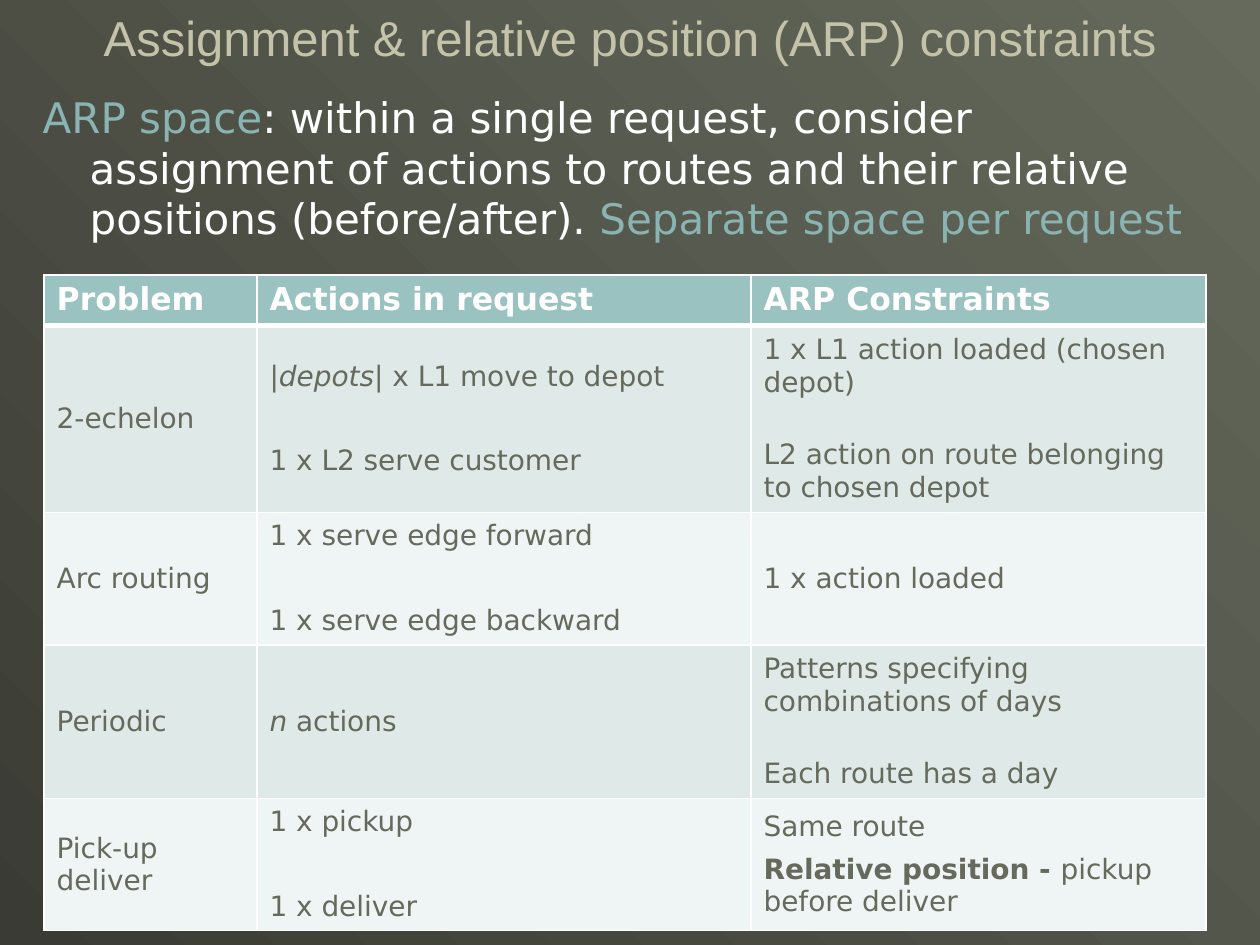
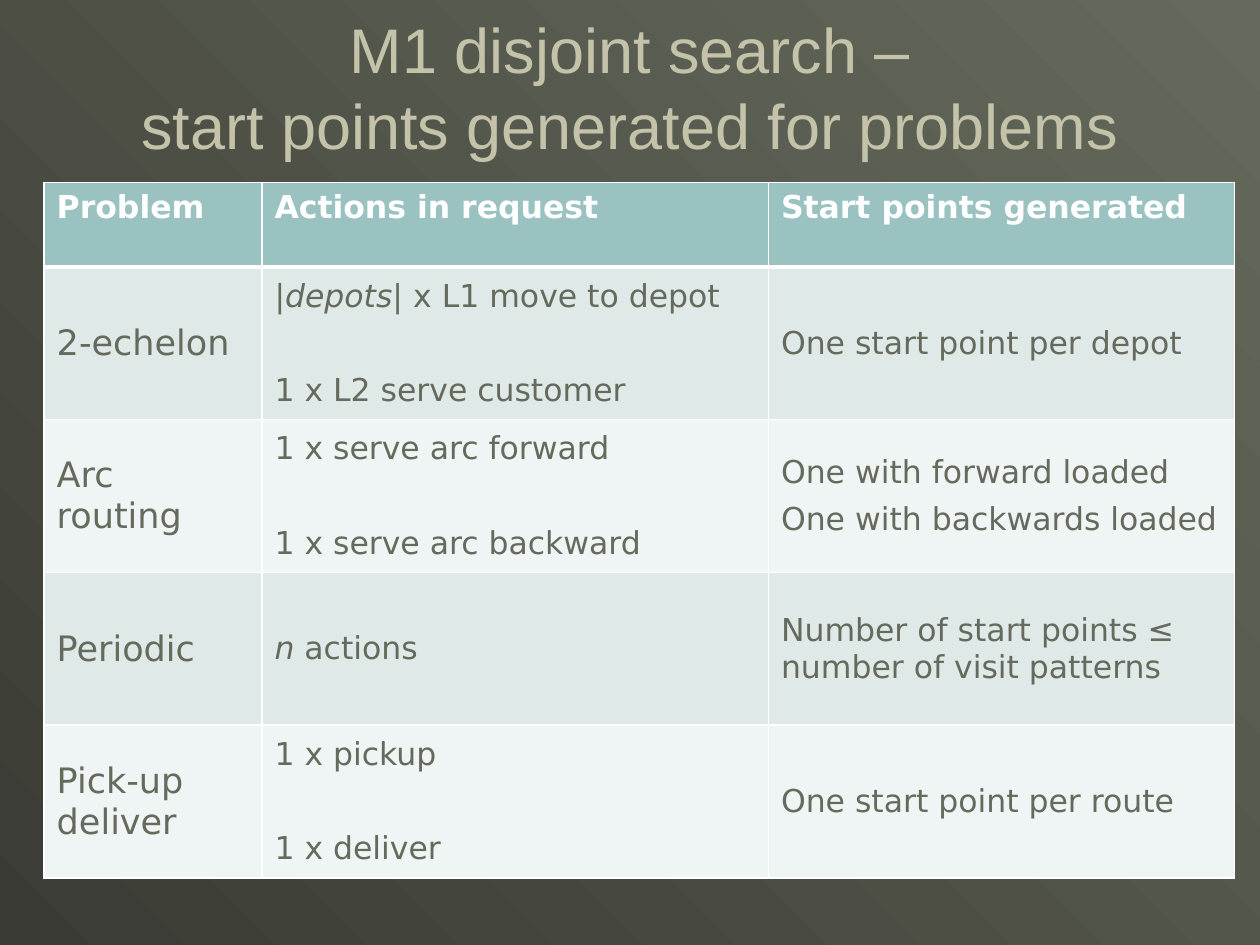
from lxml import etree
from pptx import Presentation
from pptx.dml.color import RGBColor
from pptx.enum.text import MSO_ANCHOR, PP_ALIGN
from pptx.oxml.ns import qn
from pptx.util import Cm, Pt

TOP, MIDDLE = MSO_ANCHOR.TOP, MSO_ANCHOR.MIDDLE
LEFT, CENTER = PP_ALIGN.LEFT, PP_ALIGN.CENTER
BLANK_LAYOUT = 6

COLORS = {
    "dark": "3A3B34",
    "olive": "666A5C",
    "title": "C4C3AA",
    "accent": "8AB4B1",
    "header": "9AC2C0",
    "odd_row": "DEE9E8",
    "even_row": "EFF4F4",
    "white": "FFFFFF",
}
TITLE_FONT = "Arial"
BODY_FONT = "DejaVu Sans"
MARGIN = 0.89
LINE_GAP = 6


def rgb(name):
    return RGBColor.from_string(COLORS[name])


def write(frame, paras, size=18, font=BODY_FONT, color="white", bold=False,
          align=LEFT, before=0, gap=None):
    """Fill a text frame; a para is a list of strings or (text, format) spans.

    gap is the space before every para after the first; "\\n" breaks a line.
    """
    frame.word_wrap = True
    for index, spans in enumerate(paras):
        para = frame.paragraphs[0] if index == 0 else frame.add_paragraph()
        para.alignment = align
        para.space_before = Pt(gap if index and gap else before)
        for span in spans:
            text, style = (span, {}) if isinstance(span, str) else span
            for number, line in enumerate(text.split("\n")):
                if number:
                    para.add_line_break()
                run = para.add_run()
                run.text = line
                run.font.name = font
                run.font.size = Pt(size)
                run.font.bold = style.get("bold", bold)
                run.font.italic = style.get("italic", False)
                run.font.color.rgb = rgb(style.get("color", color))


def set_borders(cell, **widths):
    """Draw white cell borders, with widths in points keyed L, R, T and B."""
    properties = cell._tc.get_or_add_tcPr()
    for side in "LRTB":
        line = etree.SubElement(properties, qn(f"a:ln{side}"),
                                w=str(Pt(widths.get(side, 1))))
        fill = etree.SubElement(line, qn("a:solidFill"))
        etree.SubElement(fill, qn("a:srgbClr"), val=COLORS["white"])


class DeckBuilder:
    def __init__(self):
        self.deck = Presentation()
        self.deck.slide_width, self.deck.slide_height = Cm(25.4), Cm(19.05)
        self.page = None

    def add_page(self, title, top, size):
        self.page = self.deck.slides.add_slide(self.deck.slide_layouts[BLANK_LAYOUT])
        fill = self.page.background.fill
        fill.gradient()
        fill.gradient_angle = 45
        for stop, position, name in zip(fill.gradient_stops, (0, 1), ("dark", "olive")):
            stop.position = position
            stop.color.rgb = rgb(name)
        self.add_text([[title]], 1.27, top, 22.86, 3.18, anchor=MIDDLE,
                      size=size, font=TITLE_FONT, color="title", align=CENTER)

    def add_text(self, paras, left, top, width, height, anchor=TOP, hanging=0, **style):
        box = self.page.shapes.add_textbox(Cm(left), Cm(top), Cm(width), Cm(height))
        box.text_frame.vertical_anchor = anchor
        write(box.text_frame, paras, **style)
        if hanging:
            for para in box.text_frame.paragraphs:
                properties = para._p.get_or_add_pPr()
                properties.set("marL", str(Cm(hanging)))
                properties.set("indent", str(-Cm(hanging)))

    def add_table(self, top, widths, heights, headings, rows, sizes, gaps):
        """Add a banded table; sizes and gaps hold one value per column."""
        table = self.page.shapes.add_table(
            len(heights), len(widths), Cm(MARGIN), Cm(top),
            Cm(sum(widths)), Cm(sum(heights))).table
        for column, width in zip(table.columns, widths):
            column.width = Cm(width)
        for row, height in zip(table.rows, heights):
            row.height = Cm(height)
        for index, heading in enumerate(headings):
            cell = table.cell(0, index)
            self.style_cell(cell, "header", TOP, B=3)
            write(cell.text_frame, [[heading]], bold=True)
        for number, row in enumerate(rows, 1):
            band = "odd_row" if number % 2 else "even_row"
            for index, paras in enumerate(row):
                cell = table.cell(number, index)
                self.style_cell(cell, band, MIDDLE, T=3 if number == 1 else 1)
                # Only paras that stand apart, not plain line pairs, get the wide gap
                is_pair = paras[0][0] in CLOSE_PAIRS
                write(cell.text_frame, paras, size=sizes[index], color="olive",
                      before=LINE_GAP, gap=LINE_GAP if is_pair else gaps[index])

    @staticmethod
    def style_cell(cell, color, anchor, **borders):
        set_borders(cell, **borders)
        cell.fill.solid()
        cell.fill.fore_color.rgb = rgb(color)
        cell.vertical_anchor = anchor


CLOSE_PAIRS = ("Same route", "One with forward loaded")
ITALIC, BOLD, ACCENT = {"italic": True}, {"bold": True}, {"color": "accent"}

ECHELON_ACTIONS = [[("|depots| ", ITALIC), "x L1 move to depot"],
                   ["1 x L2 serve customer"]]
PERIODIC_ACTIONS = [[("n", ITALIC), " actions"]]
PICKUP_ACTIONS = [["1 x pickup"], ["1 x deliver"]]


def problem_rows(routing_name, routed_item, results):
    """Join the problems and actions both tables share with their last column."""
    problems = ("2-echelon", routing_name, "Periodic", "Pick-up\ndeliver")
    routing_actions = [[f"1 x serve {routed_item} {way}"] for way in ("forward", "backward")]
    actions = (ECHELON_ACTIONS, routing_actions, PERIODIC_ACTIONS, PICKUP_ACTIONS)
    return [([[problem]], action, result)
            for problem, action, result in zip(problems, actions, results)]


def add_constraints_page(builder):
    builder.add_page("Assignment & relative position (ARP) constraints", -0.84, 28)
    constraints = (
        [["1 x L1 action loaded (chosen depot)"],
         ["L2 action on route belonging to chosen depot"]],
        [["1 x action loaded"]],
        [["Patterns specifying combinations of days"], ["Each route has a day"]],
        [["Same route"], [("Relative position - ", BOLD), "pickup before deliver"]],
    )
    builder.add_table(5.54, (4.29, 9.96, 9.17), (1.01, 3.69, 2.64, 3.04, 2.64),
                      ("Problem", "Actions in request", "ARP Constraints"),
                      problem_rows("Arc routing", "edge", constraints),
                      sizes=(16, 16, 16), gaps=(LINE_GAP, 30, 23))
    builder.add_text(
        [[("ARP space", ACCENT),
          ": within a single request, consider assignment of actions to routes "
          "and their relative positions (before/after). ",
          ("Separate space per request", ACCENT)]],
        0.61, 1.73, 24.1, 3.33, hanging=0.95, size=24)


def add_start_points_page(builder):
    builder.add_page("M1 disjoint search –\nstart points generated for problems", 0.15, 36)
    start_points = (
        [["One start point per depot"]],
        [["One with forward loaded"], ["One with backwards loaded"]],
        [["Number of start points ≤ number of visit patterns"]],
        [["One start point per route"]],
    )
    builder.add_table(3.68, (4.39, 10.21, 9.4), (1.7,) + (3.08,) * 4,
                      ("Problem", "Actions in request", "Start points generated"),
                      problem_rows("Arc\nrouting", "arc", start_points),
                      sizes=(20, 18, 18), gaps=(LINE_GAP, 33, LINE_GAP))


def main():
    builder = DeckBuilder()
    add_constraints_page(builder)
    add_start_points_page(builder)
    builder.deck.save("out.pptx")


if __name__ == "__main__":
    main()
